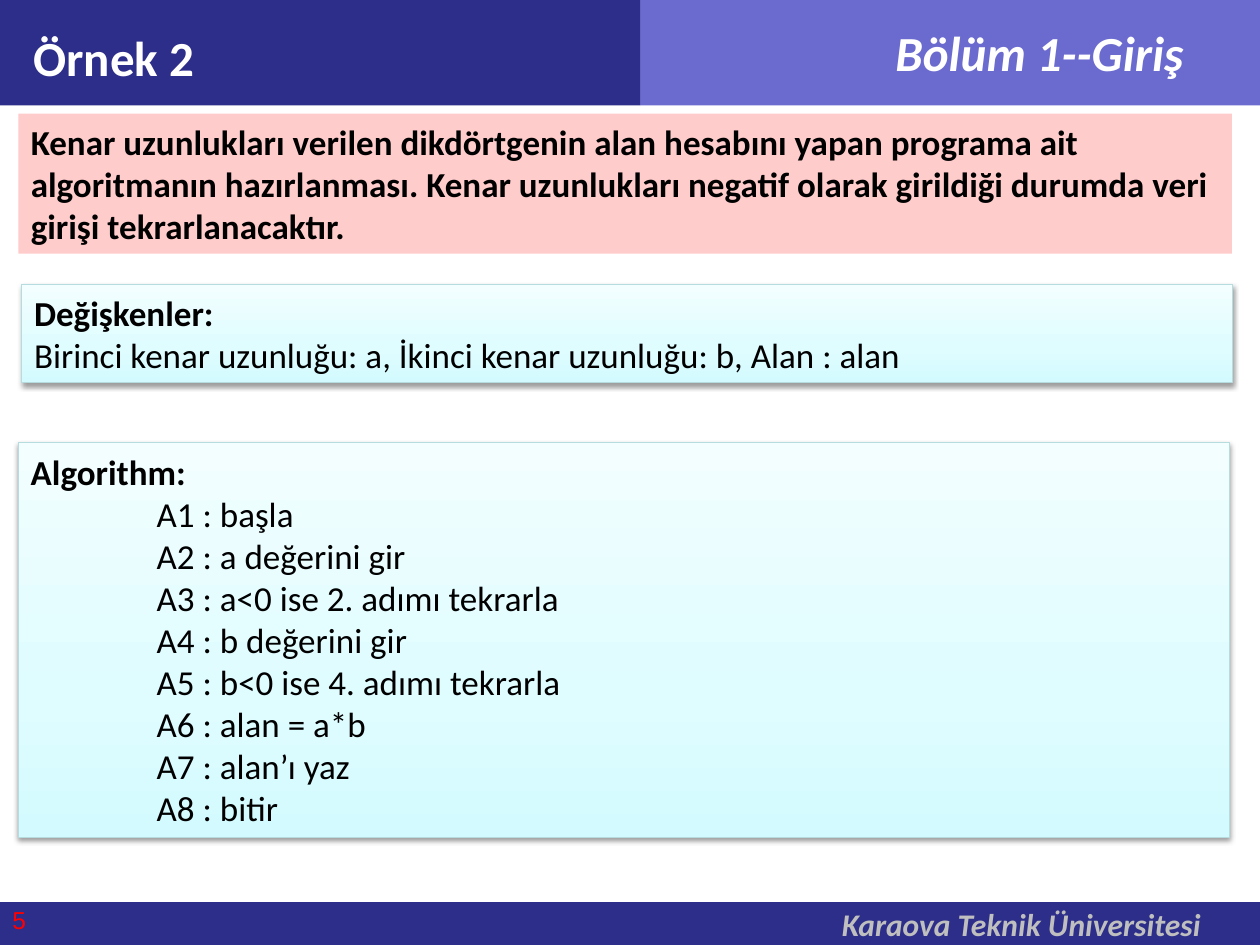
"""Builds the slide with the rectangle area algorithm."""
from copy import deepcopy

from lxml.etree import SubElement
from pptx import Presentation
from pptx.dml.color import RGBColor
from pptx.enum.shapes import MSO_SHAPE
from pptx.enum.text import MSO_ANCHOR, MSO_AUTO_SIZE, PP_ALIGN
from pptx.oxml.ns import qn
from pptx.util import Pt

COLORS = {
    "navy": "2D2D8A", "violet": "6B6BCF", "pink": "FFCCCC", "white": "FFFFFF",
    "silver": "BFBFBF", "black": "000000", "red": "FF0000", "edge": "B6DCDF",
    "ice": "D3FBFF", "frost": "DFFCFF", "mist": "F2FEFF",
}
CARD_STOPS = [(0, "ice"), (0.35, "frost"), (1, "mist")]


def add_box(left, top, width, height, fill=None):
    box = slide.shapes.add_shape(
        MSO_SHAPE.RECTANGLE, Pt(left), Pt(top), Pt(width), Pt(height))
    box.shadow.inherit = False
    box.line.fill.background()
    if fill:
        box.fill.solid()
        box.fill.fore_color.rgb = RGBColor.from_string(COLORS[fill])
    return box


def write(box, lines, size, color="black", font="Calibri", bold=False,
          italic=False, align=PP_ALIGN.LEFT, anchor=MSO_ANCHOR.MIDDLE,
          indent=0):
    frame = box.text_frame
    frame.word_wrap = True
    frame.auto_size = MSO_AUTO_SIZE.NONE
    frame.vertical_anchor = anchor
    for index, line in enumerate(lines):
        paragraph = frame.add_paragraph() if index else frame.paragraphs[0]
        paragraph.alignment = align
        if index and indent:
            margins = paragraph._p.get_or_add_pPr()
            margins.set("marL", str(Pt(indent)))
            margins.set("indent", "0")
        run = paragraph.add_run()
        run.text = line
        run.font.name = font
        run.font.size = Pt(size)
        run.font.bold = bold and index == 0
        run.font.italic = italic
        run.font.color.rgb = RGBColor.from_string(COLORS[color])


presentation = Presentation()
presentation.slide_width = Pt(720)
presentation.slide_height = Pt(540)
slide = presentation.slides.add_slide(presentation.slide_layouts[6])

add_box(0, 515.5, 720, 25.5, "navy")
add_box(365.75, 0, 357, 60.25, "violet")
add_box(0, 0, 365.75, 60.25, "navy")

chapter = slide.shapes.add_textbox(Pt(468), Pt(9.5), Pt(252), Pt(41))
write(chapter, ["Bölüm 1--Giriş"], 28, "white", bold=True, italic=True,
      align=PP_ALIGN.CENTER, anchor=MSO_ANCHOR.TOP)

school = slide.shapes.add_textbox(Pt(474), Pt(513.5), Pt(265), Pt(29))
write(school, ["Karaova Teknik Üniversitesi"], 18, "silver", bold=True,
      italic=True, anchor=MSO_ANCHOR.TOP)

title = slide.shapes.add_textbox(Pt(12), Pt(12), Pt(339), Pt(37.5))
title.text_frame.margin_bottom = 0
write(title, ["Örnek 2"], 28, "white", bold=True)

task = add_box(10.5, 65, 693.5, 80, "pink")
write(task, ["Kenar uzunlukları verilen dikdörtgenin alan hesabını yapan "
             "programa ait algoritmanın hazırlanması. Kenar uzunlukları "
             "negatif olarak girildiği durumda veri girişi "
             "tekrarlanacaktır."], 20, bold=True)

steps = ["başla", "a değerini gir", "a<0 ise 2. adımı tekrarla",
         "b değerini gir", "b<0 ise 4. adımı tekrarla", "alan = a*b",
         "alan’ı yaz", "bitir"]
variables = ["Değişkenler:",
             "Birinci kenar uzunluğu: a, İkinci kenar uzunluğu: b, Alan : alan"]
algorithm = ["Algorithm:"] + [
    f"A{number} : {step}" for number, step in enumerate(steps, 1)]

for left, top, height, lines, indent in [
        (12.4, 162.75, 55.75, variables, 0),
        (10.5, 252.9, 225.5, algorithm, 72)]:
    card = add_box(left, top, 692, height)
    card.line.color.rgb = RGBColor.from_string(COLORS["edge"])
    card.line.width = Pt(0.75)
    card.fill.gradient()
    card.fill.gradient_angle = 90
    properties = card._element.spPr
    stop_list = properties.find(".//" + qn("a:gsLst"))
    stop_list.append(deepcopy(stop_list[0]))
    for stop, (position, color) in zip(card.fill.gradient_stops, CARD_STOPS):
        stop.position = position
        stop.color.rgb = RGBColor.from_string(COLORS[color])
    shadow = SubElement(
        properties.find(qn("a:effectLst")), qn("a:outerShdw"),
        blurRad=str(Pt(3.1)), dist=str(Pt(1.6)), dir="5400000",
        rotWithShape="0")
    shade = SubElement(shadow, qn("a:srgbClr"), val=COLORS["black"])
    SubElement(shade, qn("a:alpha"), val="38000")
    write(card, lines, 20, bold=True, indent=indent)

page_number = slide.shapes.add_textbox(Pt(0), Pt(513.75), Pt(168), Pt(26))
write(page_number, ["5"], 14, "red", font="Arial", anchor=MSO_ANCHOR.TOP)

presentation.save("out.pptx")
